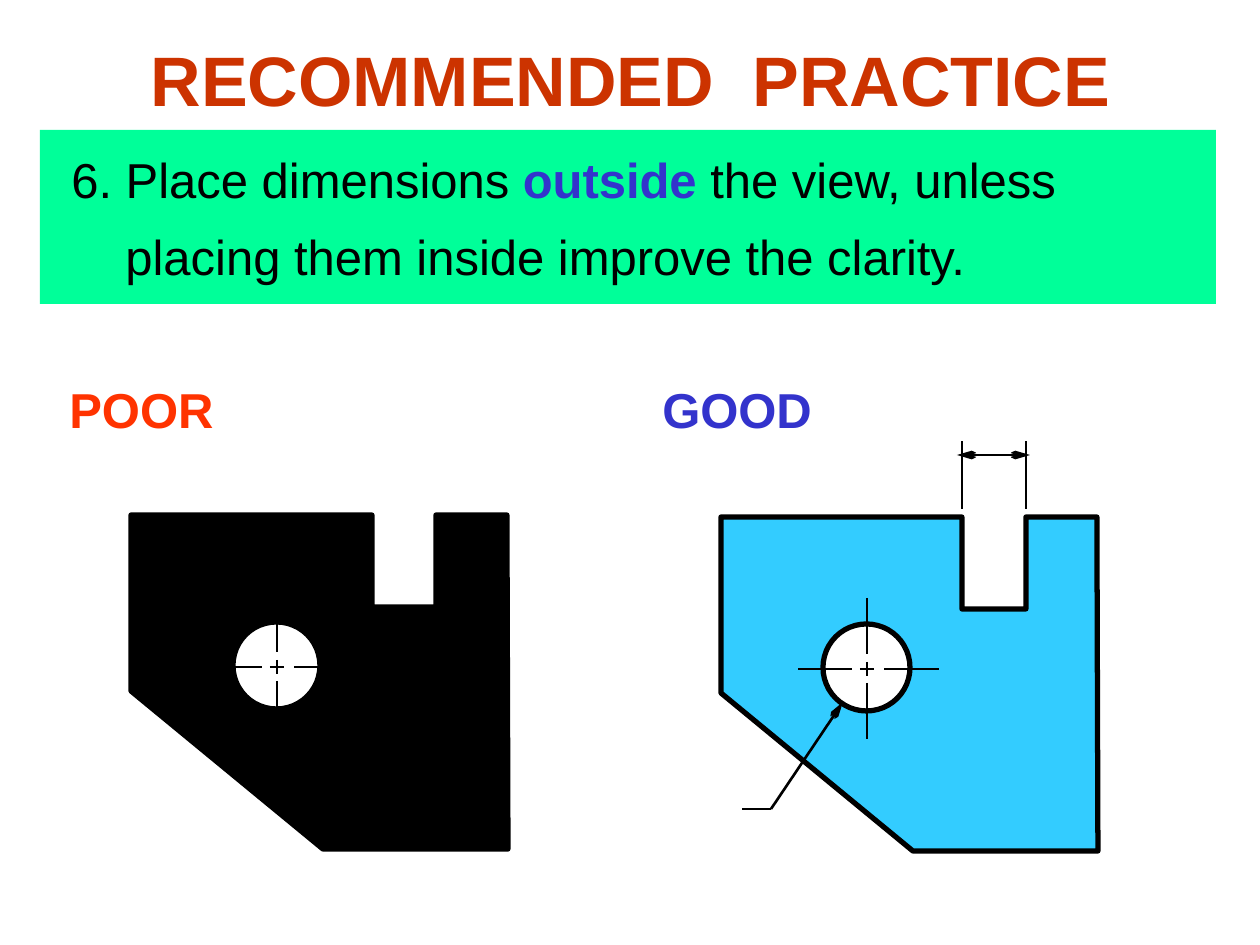
from lxml.etree import SubElement
from pptx import Presentation
from pptx.dml.color import RGBColor
from pptx.enum.shapes import MSO_CONNECTOR, MSO_SHAPE
from pptx.enum.text import MSO_ANCHOR, PP_ALIGN
from pptx.oxml.ns import qn
from pptx.util import Pt

SCALE = 914400 / 126  # EMU in one px
BLACK = RGBColor(0, 0, 0)
WHITE = RGBColor(255, 255, 255)
RUST = RGBColor(0xCC, 0x33, 0x00)
RED = RGBColor(0xFF, 0x33, 0x00)
BLUE = RGBColor(0x33, 0x33, 0xCC)
GREEN = RGBColor(0x00, 0xFF, 0x99)
SKY = RGBColor(0x33, 0xCC, 0xFF)


def px(*nums):
    return [round(n * SCALE) for n in nums]


def draw_line(shapes, ends, tips=()):
    """Draw a thin black line; tips names the ends that get arrowheads."""
    line = shapes.add_connector(MSO_CONNECTOR.STRAIGHT, *px(*ends))
    line.line.color.rgb = BLACK
    line.line.width = Pt(1.5)
    for tip in tips:
        SubElement(line.line._get_or_add_ln(), qn(f"a:{tip}"),
                   type="arrow", w="sm", len="lg")
    SubElement(line._element.spPr, qn("a:effectLst"))


deck = Presentation()
deck.slide_width, deck.slide_height = px(1260, 945)
slide = deck.slides.add_slide(deck.slide_layouts[5])
shapes = slide.shapes

# Title
title = shapes.title
title.left, title.top, title.width, title.height = px(95, 23, 1071, 111)
title.text_frame.vertical_anchor = MSO_ANCHOR.MIDDLE

# Rule on its green band
band = shapes.add_shape(MSO_SHAPE.RECTANGLE, *px(40, 130, 1176, 174))
band.shadow.inherit = False
band.fill.solid()
band.fill.fore_color.rgb = GREEN
band.line.fill.background()

rule = shapes.add_textbox(*px(32, 126, 1183, 159))
rule.text_frame.word_wrap = True
rule_par = rule.text_frame.paragraphs[0]
rule_par.line_spacing = 1.3
left, hang = px(81, -54)
props = rule_par._p.get_or_add_pPr()
props.set("marL", str(left))
props.set("indent", str(hang))

poor = shapes.add_textbox(*px(57, 373, 171, 72))
good = shapes.add_textbox(*px(650, 373, 176, 72))
for label in (poor, good):
    label.text_frame.word_wrap = False

title_par = title.text_frame.paragraphs[0]
title_par.alignment = PP_ALIGN.CENTER
texts = [
    (title_par, "RECOMMENDED  PRACTICE", 40, RUST, True),
    (rule_par, "6. Place dimensions ", 28, BLACK, False),
    (rule_par, "outside", 28, BLUE, True),
    (rule_par, " the view, unless", 28, BLACK, False),
    (rule_par, "\n", 28, BLACK, False),
    (rule_par, "placing them inside improve the clarity.", 28, BLACK, False),
    (poor.text_frame.paragraphs[0], "POOR", 28, RED, True),
    (good.text_frame.paragraphs[0], "GOOD", 28, BLUE, True),
]
for par, text, size, color, bold in texts:
    if text == "\n":
        par.add_line_break()
        continue
    run = par.add_run()
    run.text = text
    run.font.name = "Arial"
    run.font.size = Pt(size)
    run.font.bold = bold
    run.font.color.rgb = color

# Notched plate with a hole, measured from its top left corner
OUTLINE = [(376, 0), (305, 0), (305, 92), (241, 92), (241, 0), (0, 0),
           (0, 176), (192, 334), (377, 334)]
CROSS = [(146, 145, 146, 159), (146, 81, 146, 137), (146, 166, 146, 222),
         (139, 152, 153, 152), (218, 152, 163, 152), (131, 152, 77, 152)]
BOTH = ("headEnd", "tailEnd")

# Plate corner, fill, leader bend, leader tip, shelf end, top of slot dimension
plates = [
    (131, 515, BLACK, (348, 788), (299, 702), 377, 616),
    (721, 517, SKY, (771, 809), (843, 702), 742, 441),
]
for x, y, color, bend, tip, shelf, top in plates:
    group = shapes.add_group_shape().shapes
    points = [px(x + dx, y + dy) for dx, dy in OUTLINE]
    build = group.build_freeform(*points[0], scale=1.0)
    build.add_line_segments(points[1:], close=True)
    plate = build.convert_to_shape()
    hole = group.add_shape(MSO_SHAPE.OVAL, *px(x + 102, y + 107, 87, 87))
    for part, fill in ((plate, color), (hole, WHITE)):
        part.shadow.inherit = False
        part.fill.solid()
        part.fill.fore_color.rgb = fill
        part.line.color.rgb = BLACK
        part.line.width = Pt(3)
    for x1, y1, x2, y2 in CROSS:
        draw_line(group, (x + x1, y + y1, x + x2, y + y2))

    # Hole leader and slot dimension
    draw_line(shapes, (*tip, *bend), ["headEnd"])
    draw_line(shapes, (*bend, shelf, bend[1]))
    for side in (241, 305):
        draw_line(shapes, (x + side, top, x + side, top + 68))
    mid = top + 14 if top < y else top + 57
    draw_line(shapes, (x + 309, mid, x + 236, mid), BOTH)

deck.save("out.pptx")
